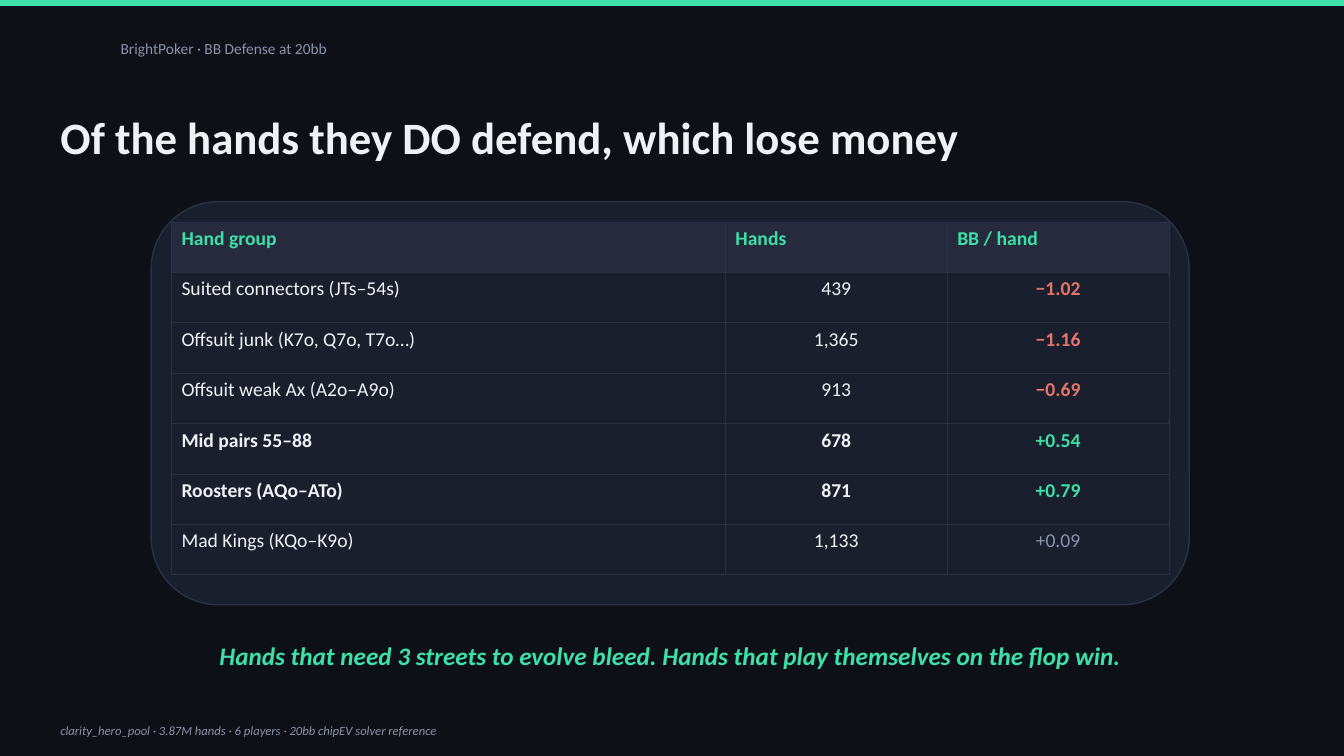
from lxml.etree import SubElement
from pptx import Presentation
from pptx.dml.color import RGBColor
from pptx.enum.shapes import MSO_SHAPE
from pptx.enum.text import MSO_ANCHOR, MSO_AUTO_SIZE, PP_ALIGN
from pptx.oxml.ns import qn
from pptx.util import Cm, Pt

BACK, CARD, HEAD, EDGE = "0E1018", "1A1F2E", "252B3D", "2B3145"
WHITE, MUTED, GREEN, RED = "EEF2F7", "8A93A8", "3DE0A8", "E5736A"
WIDTH, HEIGHT = 33.87, 19.05
MARGIN, FULL = 1.27, 31.24
HEADERS = ["Hand group", "Hands", "BB / hand"]
HANDS = [
    ("Suited connectors (JTs–54s)", "439", "−1.02", RED, False),
    ("Offsuit junk (K7o, Q7o, T7o…)", "1,365", "−1.16", RED, False),
    ("Offsuit weak Ax (A2o–A9o)", "913", "−0.69", RED, False),
    ("Mid pairs 55–88", "678", "+0.54", GREEN, True),
    ("Roosters (AQo–ATo)", "871", "+0.79", GREEN, True),
    ("Mad Kings (KQo–K9o)", "1,133", "+0.09", MUTED, False),
]


def rgb(value):
    """Turn a hex string into a colour."""
    return RGBColor.from_string(value)


def write(tf, text, size=14, color=WHITE, bold=False, italic=False, align=PP_ALIGN.LEFT):
    """Write one formatted paragraph into a text frame."""
    p = tf.paragraphs[0]
    p.alignment = align
    r = p.add_run()
    r.text = text
    r.font.name = "Calibri"
    r.font.size = Pt(size)
    r.font.bold = bold
    r.font.italic = italic
    r.font.color.rgb = rgb(color)


def add_text(s, box, text, **fmt):
    """Add a wrapping, vertically centred text box."""
    tf = s.shapes.add_textbox(*map(Cm, box)).text_frame
    tf.word_wrap = True
    tf.vertical_anchor = MSO_ANCHOR.MIDDLE
    write(tf, text, **fmt)


def add_panel(s, kind, box, fill, line=None):
    """Add a flat filled shape with an optional outline."""
    sp = s.shapes.add_shape(kind, *map(Cm, box))
    sp.shadow.inherit = False
    sp.fill.solid()
    sp.fill.fore_color.rgb = rgb(fill)
    if line:
        sp.line.color.rgb = rgb(line)
        sp.line.width = Pt(1)
    else:
        sp.line.fill.background()


def add_title(s, box, text):
    """Place and format the title placeholder."""
    title = s.shapes.title
    title.left, title.top, title.width, title.height = map(Cm, box)
    tf = title.text_frame
    tf.word_wrap = True
    tf.auto_size = MSO_AUTO_SIZE.NONE
    tf.vertical_anchor = MSO_ANCHOR.MIDDLE
    write(tf, text, size=32, bold=True)


def format_cell(cell, fill=None):
    """Give a cell thin borders and a solid or empty fill."""
    tcPr = cell._tc.get_or_add_tcPr()
    for side in ("a:lnL", "a:lnR", "a:lnT", "a:lnB"):
        ln = SubElement(tcPr, qn(side), w=str(Pt(0.5)))
        SubElement(SubElement(ln, qn("a:solidFill")), qn("a:srgbClr"), val=EDGE)
    if fill:
        cell.fill.solid()
        cell.fill.fore_color.rgb = rgb(fill)
    else:
        cell.fill.background()


def add_hand_card(s, box):
    """Draw the rounded card and the table of hand groups inside it."""
    x, y, w, h = box
    pad, row_h, num_w = 0.51, 1.27, 5.59
    add_panel(s, MSO_SHAPE.ROUNDED_RECTANGLE, box, CARD, EDGE)
    table_w, rows = w - 2 * pad, len(HANDS) + 1
    table = s.shapes.add_table(rows, len(HEADERS), Cm(x + pad), Cm(y + pad),
                               Cm(table_w), Cm(rows * row_h)).table
    table.horz_banding = False
    for col, col_w in zip(table.columns, (table_w - 2 * num_w, num_w, num_w)):
        col.width = Cm(col_w)
    for row in table.rows:
        row.height = Cm(row_h)
    for c, header in enumerate(HEADERS):
        cell = table.cell(0, c)
        format_cell(cell, HEAD)
        write(cell.text_frame, header, color=GREEN, bold=True)
    for i, (group, count, result, color, strong) in enumerate(HANDS, 1):
        formats = [
            (group, dict(bold=strong)),
            (count, dict(bold=strong, align=PP_ALIGN.CENTER)),
            (result, dict(bold=color != MUTED, color=color, align=PP_ALIGN.CENTER)),
        ]
        for c, (text, fmt) in enumerate(formats):
            cell = table.cell(i, c)
            format_cell(cell)
            write(cell.text_frame, text, **fmt)


def add_frame(s, box):
    """Draw the background, top bar, running header and source line."""
    x, y, w, h = box
    s.background.fill.solid()
    s.background.fill.fore_color.rgb = rgb(BACK)
    add_panel(s, MSO_SHAPE.RECTANGLE, (x, y, w, 0.15), GREEN)
    add_text(s, (x + 2.79, y + 0.64, 20.32, 1.14),
             "BrightPoker · BB Defense at 20bb", size=11, color=MUTED)
    add_text(s, (x + MARGIN, y + h - 1.14, FULL, 1.02),
             "clarity_hero_pool · 3.87M hands · 6 players · 20bb chipEV solver reference",
             size=9, color=MUTED, italic=True)


def main():
    """Build and save the slide."""
    prs = Presentation()
    prs.slide_width, prs.slide_height = Cm(WIDTH), Cm(HEIGHT)
    s = prs.slides.add_slide(prs.slide_layouts[5])
    add_frame(s, (0, 0, WIDTH, HEIGHT))
    add_title(s, (MARGIN, 2.54, FULL, 1.78), "Of the hands they DO defend, which lose money")
    add_hand_card(s, (3.81, 5.08, 26.16, 10.16))
    add_text(s, (MARGIN, 15.75, FULL, 1.52),
             "Hands that need 3 streets to evolve bleed. Hands that play themselves on the flop win.",
             size=18, color=GREEN, bold=True, italic=True, align=PP_ALIGN.CENTER)
    prs.save("out.pptx")


if __name__ == "__main__":
    main()
